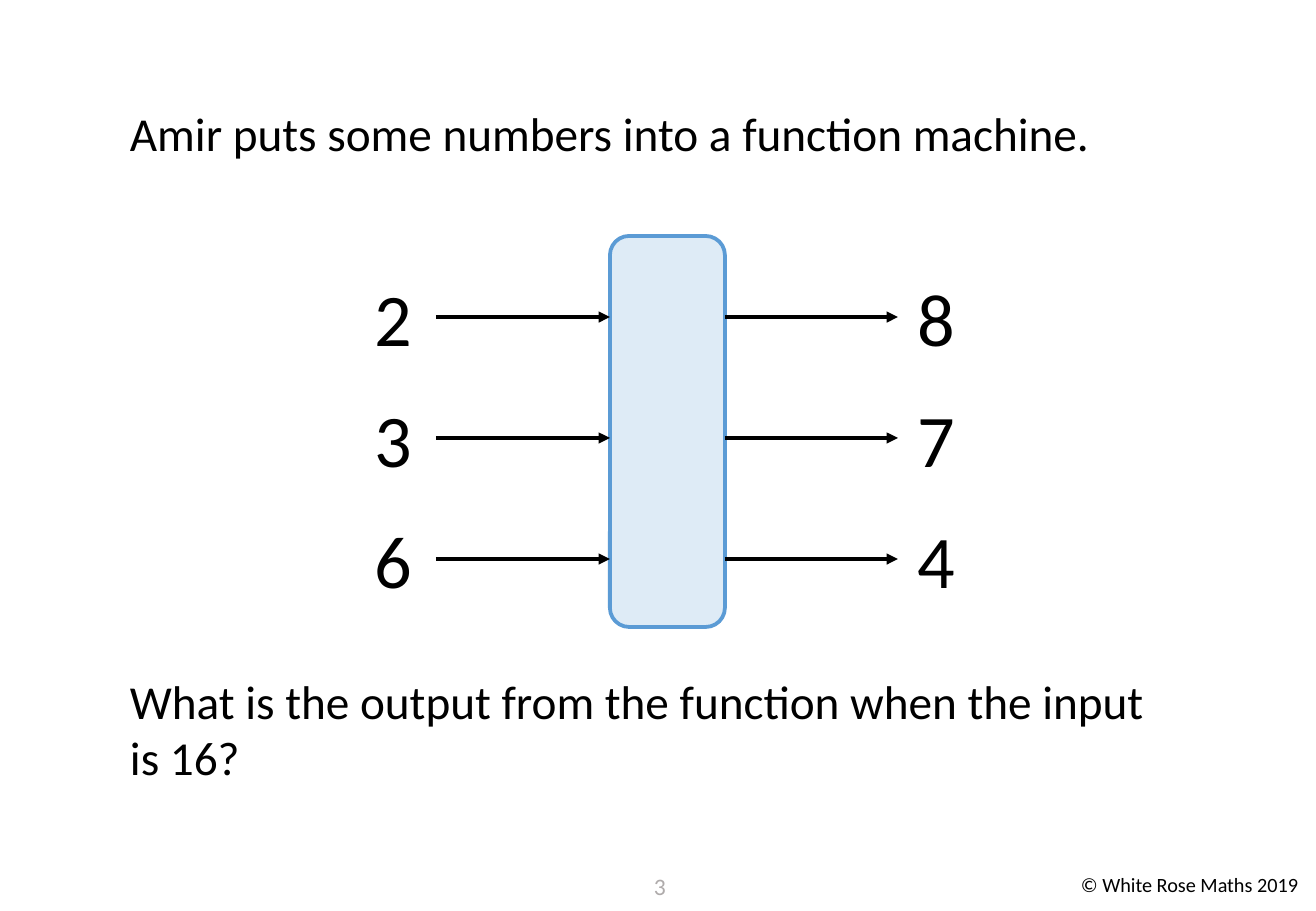
from lxml import etree
from pptx import Presentation
from pptx.dml.color import RGBColor
from pptx.enum.shapes import MSO_CONNECTOR as Connector, MSO_SHAPE as Shape
from pptx.enum.text import PP_ALIGN as Align
from pptx.oxml.ns import qn
from pptx.util import Pt

# Content
STATEMENT = "Amir puts some numbers into a function machine."
QUESTION = "What is the output from the function when the input is 16?"
PAIRS = [("2", "8"), ("3", "7"), ("6", "4")]
PAGE_NUMBER = "3"
COPYRIGHT = "© White Rose Maths 2019"

# Layout in px
PX = 7526
PAGE_WIDTH, PAGE_HEIGHT = 1316, 911
MACHINE = (610, 236, 115, 391)
INPUT_LEFT, INPUT_WIDTH = 351, 85
OUTPUT_LEFT, OUTPUT_WIDTH = 898, 77
FIRST_ROW, ROW_PITCH, ROW_HEIGHT = 266, 121, 102
LEFT_SIDE, RIGHT_SIDE = 1, 3


def emu(*lengths):
    return [length * PX for length in lengths]


def color(value):
    return RGBColor.from_string(value)


def add_text(page, text, place, size, align=Align.LEFT, tint="000000", wrap=True):
    box = page.shapes.add_textbox(*emu(*place))
    box.text_frame.word_wrap = wrap
    para = box.text_frame.paragraphs[0]
    para.text = text
    para.alignment = align
    para.font.name = "Calibri"
    para.font.size = Pt(size)
    para.font.color.rgb = color(tint)
    return box


def add_arrow(page, start, end, y):
    arrow = page.shapes.add_connector(Connector.STRAIGHT, *emu(start, y, end, y))
    arrow.line.color.rgb = color("000000")
    arrow.line.width = Pt(2.25)
    properties = arrow.element.spPr
    etree.SubElement(properties.find(qn("a:ln")), qn("a:tailEnd"), type="triangle")
    etree.SubElement(properties, qn("a:effectLst"))
    return arrow


deck = Presentation()
deck.slide_width, deck.slide_height = emu(PAGE_WIDTH, PAGE_HEIGHT)
page = deck.slides.add_slide(deck.slide_layouts[6])

# Footer
add_text(page, COPYRIGHT, (1069, 866, 247, 37), 12, wrap=False)
add_text(page, PAGE_NUMBER, (629, 866, 62, 49), 14, Align.CENTER, "AFABAB")

# Problem text
add_text(page, STATEMENT, (118, 98, 1070, 70), 28)
add_text(page, QUESTION, (118, 666, 1070, 127), 28)

# Function machine
machine = page.shapes.add_shape(Shape.ROUNDED_RECTANGLE, *emu(*MACHINE))
machine.shadow.inherit = False
machine.fill.solid()
machine.fill.fore_color.rgb = color("5B9BD5")
fill_color = machine.element.spPr.find(qn("a:solidFill")).find(qn("a:srgbClr"))
etree.SubElement(fill_color, qn("a:alpha"), val="20000")
machine.line.color.rgb = color("5B9BD5")
machine.line.width = Pt(2.25)

# Inputs and outputs with their arrows
machine_left, machine_right = MACHINE[0], MACHINE[0] + MACHINE[2]
for row, (number_in, number_out) in enumerate(PAIRS):
    top = FIRST_ROW + row * ROW_PITCH
    middle = top + ROW_HEIGHT // 2
    input_box = add_text(page, number_in, (INPUT_LEFT, top, INPUT_WIDTH, ROW_HEIGHT),
                         44, Align.CENTER)
    output_box = add_text(page, number_out, (OUTPUT_LEFT, top, OUTPUT_WIDTH, ROW_HEIGHT),
                          44, Align.CENTER)
    arrow_in = add_arrow(page, INPUT_LEFT + INPUT_WIDTH, machine_left, middle)
    arrow_in.begin_connect(input_box, RIGHT_SIDE)
    arrow_out = add_arrow(page, machine_right, OUTPUT_LEFT, middle)
    arrow_out.end_connect(output_box, LEFT_SIDE)

deck.save("out.pptx")
